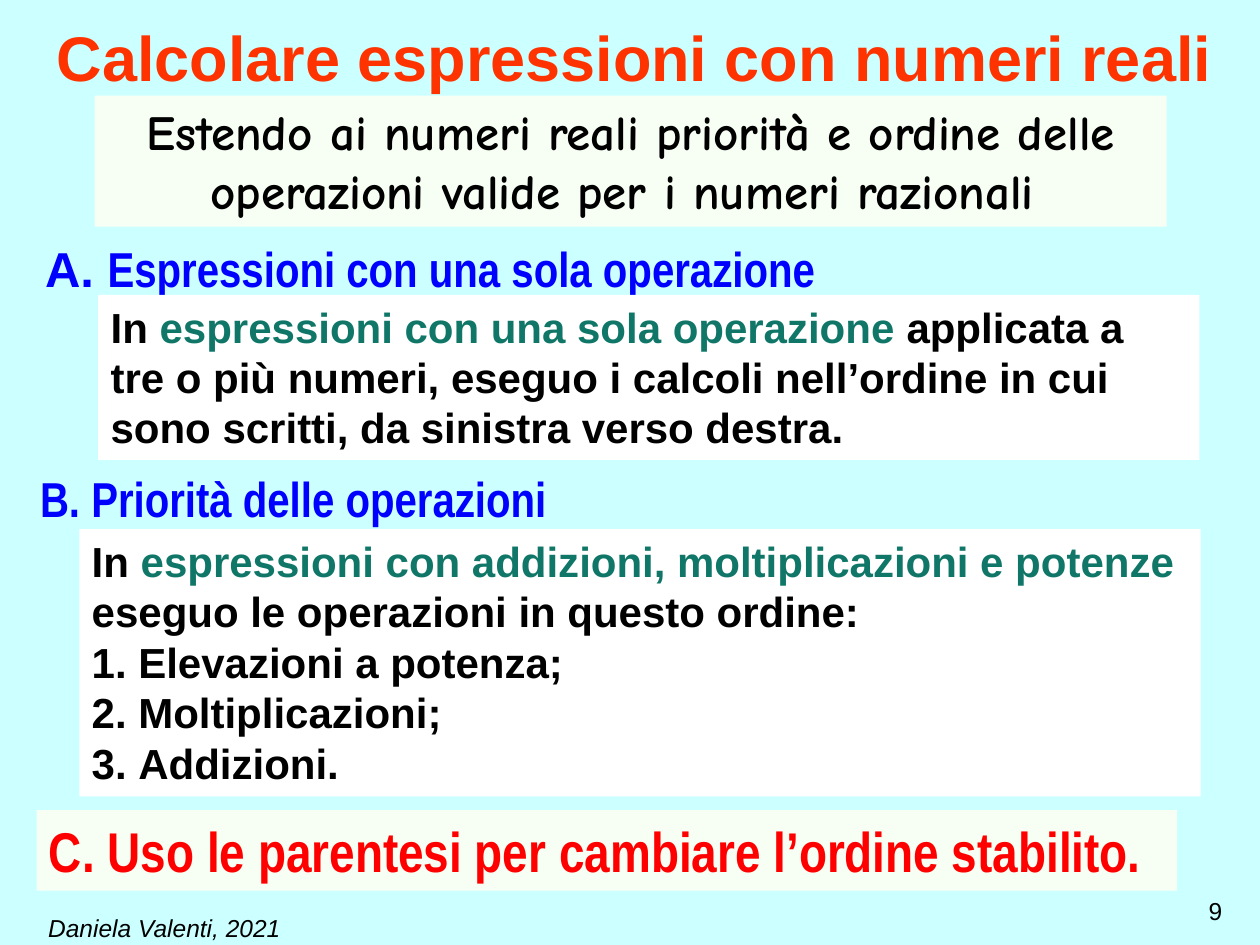
from dataclasses import dataclass

from lxml.etree import SubElement
from pptx import Presentation
from pptx.dml.color import RGBColor
from pptx.enum.shapes import MSO_SHAPE
from pptx.enum.text import MSO_ANCHOR, MSO_AUTO_SIZE, PP_ALIGN
from pptx.oxml.ns import qn
from pptx.util import Inches, Pt

COLORS = {
    "background": "CCFFFF",
    "title": "FF3300",
    "heading": "0000FF",
    "rule": "FF0000",
    "key": "107768",
    "text": "000000",
    "pale": "F7FFF4",
    "white": "FFFFFF",
}


@dataclass
class Span:
    text: str
    color: str = "text"
    font: str | None = None


@dataclass
class Line:
    spans: list[Span]
    numbered: bool = False
    hanging: float = 0


@dataclass
class Block:
    """A text box, or a filled rectangle when fill names a colour."""

    left: float
    top: float
    width: float
    height: float
    lines: list[Line]
    size: int
    font: str = "Arial"
    bold: bool = True
    italic: bool = False
    align: PP_ALIGN = PP_ALIGN.LEFT
    anchor: MSO_ANCHOR = MSO_ANCHOR.TOP
    fill: str | None = None
    grow: bool = True


def line(text: str, color: str = "text", hanging: float = 0) -> Line:
    return Line([Span(text, color)], hanging=hanging)


def step(text: str) -> Line:
    return Line([Span(text)], numbered=True, hanging=0.37)


BLOCKS = [
    Block(0.23, 0.11, 9.61, 0.68,
          [line("Calcolare espressioni con numeri reali", "title")], 36,
          align=PP_ALIGN.CENTER, anchor=MSO_ANCHOR.MIDDLE, grow=False),
    Block(-0.28, 7.2, 3.17, 0.5, [line("Daniela Valenti, 2021")], 14,
          bold=False, italic=True, align=PP_ALIGN.CENTER, grow=False),
    Block(7.47, 7.06, 2.33, 0.52, [line("9")], 14,
          bold=False, align=PP_ALIGN.RIGHT, grow=False),
    Block(0.75, 0.76, 8.51, 1.04,
          [line("Estendo ai numeri reali priorità e ordine delle "
                "operazioni valide per i numeri razionali ")], 28,
          font="Comic Neue", align=PP_ALIGN.CENTER, fill="pale"),
    Block(0.22, 3.67, 8.54, 0.57,
          [line("B. Priorità delle operazioni", "heading")], 28,
          font="Arial Narrow"),
    Block(0.63, 4.2, 8.9, 2.12,
          [Line([Span("In "),
                 Span("espressioni con addizioni, moltiplicazioni e potenze ", "key"),
                 Span("eseguo le operazioni in questo ordine:")]),
           step("Elevazioni a potenza;"),
           step("Moltiplicazioni;"),
           step("Addizioni.")], 24, fill="white"),
    Block(0.29, 6.43, 9.05, 0.64,
          [line("C. Uso le parentesi per cambiare l’ordine stabilito.",
                "rule", hanging=0.58)], 32,
          font="Arial Narrow", fill="pale"),
    Block(0.26, 1.84, 9.53, 0.57,
          [Line([Span("A. ", "heading"),
                 Span("Espressioni con una sola operazione", "heading",
                      "Arial Narrow")])], 28),
    Block(0.78, 2.34, 8.74, 1.31,
          [Line([Span("In "),
                 Span("espressioni con una sola operazione ", "key"),
                 Span("applicata a tre o più numeri, eseguo i calcoli nell’ordine "
                      "in cui sono scritti, da sinistra verso destra.")])], 24,
          fill="white"),
]


def color(name: str) -> RGBColor:
    return RGBColor.from_string(COLORS[name])


def write_line(paragraph, content: Line, block: Block) -> None:
    paragraph.alignment = block.align
    paragraph.font.size = Pt(block.size)
    paragraph.font.bold = block.bold
    paragraph.font.italic = block.italic
    paragraph.font.name = block.font
    for span in content.spans:
        run = paragraph.add_run()
        run.text = span.text
        run.font.color.rgb = color(span.color)
        if span.font:
            run.font.name = span.font
    properties = paragraph._p.get_or_add_pPr()
    if content.hanging:
        properties.set("marL", str(Inches(content.hanging)))
        properties.set("indent", str(-Inches(content.hanging)))
    if content.numbered:
        number = SubElement(properties, qn("a:buAutoNum"), type="arabicPeriod")
        properties.insert(0, number)


def draw_block(page, block: Block) -> None:
    place = [Inches(value) for value in
             (block.left, block.top, block.width, block.height)]
    if block.fill:
        box = page.shapes.add_shape(MSO_SHAPE.RECTANGLE, *place)
        box.shadow.inherit = False
        box.fill.solid()
        box.fill.fore_color.rgb = color(block.fill)
        box.line.fill.background()
    else:
        box = page.shapes.add_textbox(*place)
    frame = box.text_frame
    frame.word_wrap = True
    frame.vertical_anchor = block.anchor
    frame.auto_size = (MSO_AUTO_SIZE.SHAPE_TO_FIT_TEXT if block.grow
                       else MSO_AUTO_SIZE.NONE)
    for index, content in enumerate(block.lines):
        paragraph = frame.add_paragraph() if index else frame.paragraphs[0]
        write_line(paragraph, content, block)


def main() -> None:
    deck = Presentation()
    deck.slide_width, deck.slide_height = Inches(10), Inches(7.5)
    page = deck.slides.add_slide(deck.slide_layouts[6])
    page.background.fill.solid()
    page.background.fill.fore_color.rgb = color("background")
    for block in BLOCKS:
        draw_block(page, block)
    deck.save("out.pptx")


if __name__ == "__main__":
    main()
